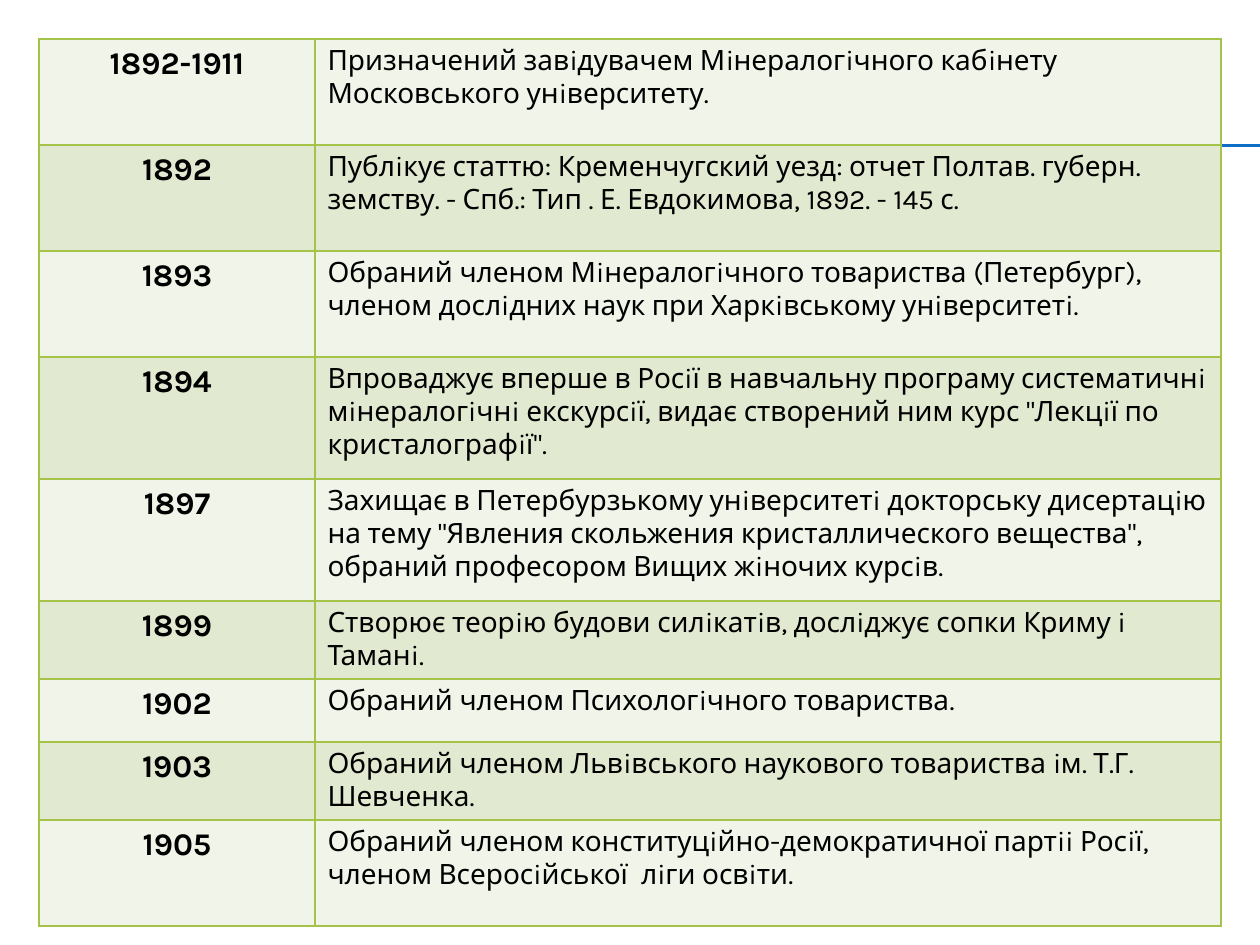
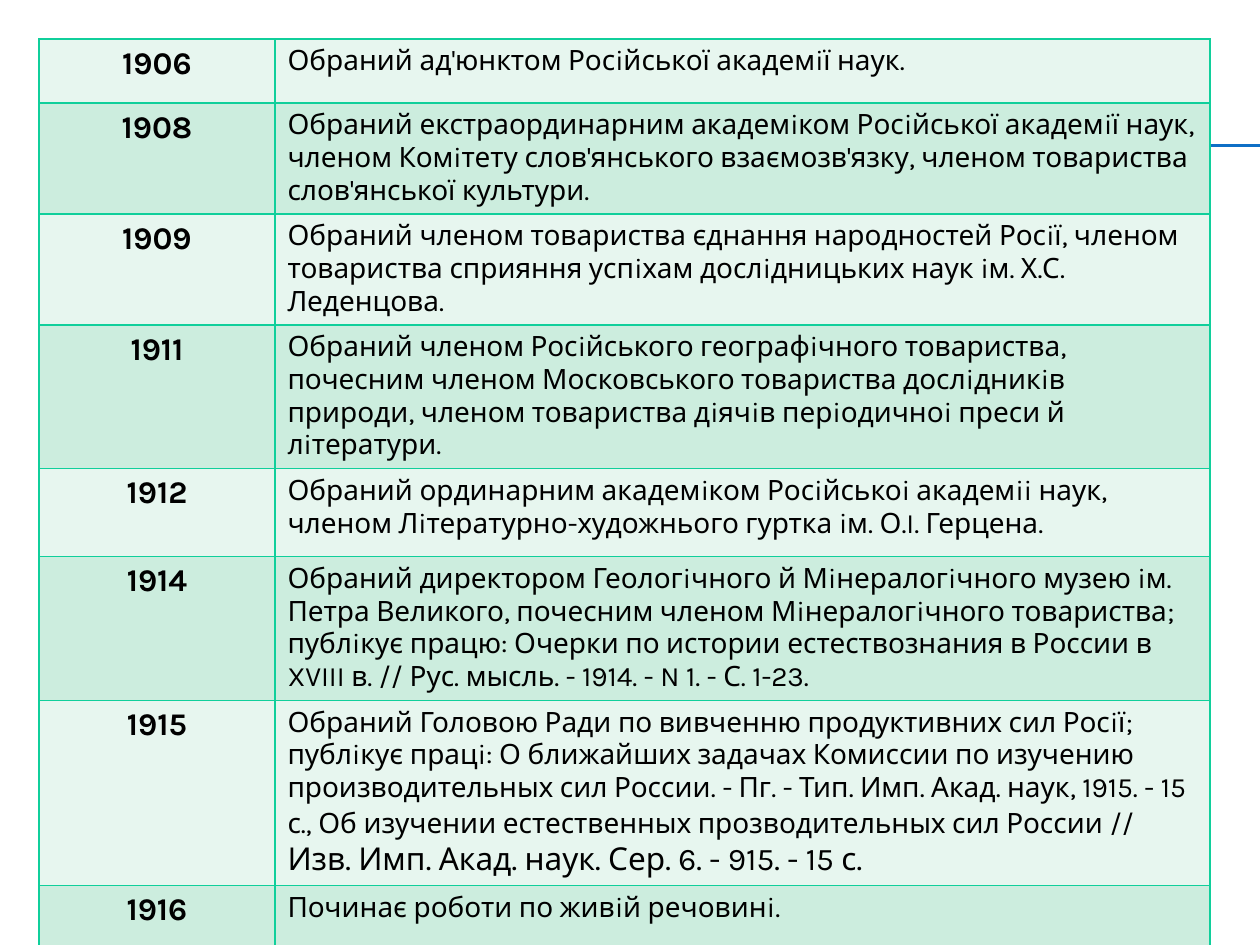
from dataclasses import dataclass

from lxml.etree import SubElement as Sub
from pptx import Presentation
from pptx.dml.color import RGBColor as Rgb
from pptx.enum.shapes import MSO_CONNECTOR as Link
from pptx.enum.text import PP_ALIGN as Align
from pptx.oxml.ns import qn
from pptx.util import Pt

# Each row: year, height in px, text (a tuple holds body text and larger text)
EARLY = [
    ("1892-1911", 106, "Призначений завiдувачем Мiнералогiчного кабiнету Московського унiверситету."),
    ("1892", 106, "Публiкує статтю: Кременчугский уезд: отчет Полтав. губерн. земству. "
     "- Спб.: Тип . Е. Евдокимова, 1892. - 145 с."),
    ("1893", 106, "Обраний членом Мiнералогiчного товариства (Петербург), "
     "членом дослiдних наук при Харкiвському унiверситетi."),
    ("1894", 122, "Впроваджує вперше в Росiї в навчальну програму систематичнi "
     "мiнералогiчнi екскурсiї, видає створений ним курс \"Лекцiї по кристалографiї\"."),
    ("1897", 122, "Захищає в Петербурзькому унiверситетi докторську дисертацiю на тему "
     "\"Явления скольжения кристаллического вещества\", обраний професором Вищих жiночих курсiв."),
    ("1899", 63, "Створює теорiю будови силiкатiв, дослiджує сопки Криму i Таманi."),
    ("1902", 63, "Обраний членом Психологiчного товариства."),
    ("1903", 63, "Обраний членом Львiвського наукового товариства iм. Т.Г. Шевченка."),
    ("1905", 106, "Обраний членом конституцiйно-демократичної партii Росiї, "
     "членом Всеросiйської  лiги освiти."),
]
LATER = [
    ("1906", 64, "Обраний ад'юнктом Росiйської академiї наук."),
    ("1908", 111, "Обраний екстраординарним академiком Росiйської академiї наук, "
     "членом Комiтету слов'янського взаємозв'язку, членом товариства слов'янської культури."),
    ("1909", 88, "Обраний членом товариства єднання народностей Росiї, "
     "членом товариства сприяння успiхам дослiдницьких наук iм. Х.С. Леденцова."),
    ("1911", 111, "Обраний членом Росiйського географiчного товариства, "
     "почесним членом Московського товариства дослiдникiв природи, "
     "членом товариства дiячiв перiодичноi преси й лiтератури."),
    ("1912", 88, "Обраний ординарним академiком Росiйськоi академii наук, "
     "членом Лiтературно-художнього гуртка iм. О.I. Герцена."),
    ("1914", 144, "Обраний директором Геологiчного й Мiнералогiчного музею iм. Петра Великого, "
     "почесним членом Мiнералогiчного товариства; публiкує працю: Очерки по истории "
     "естествознания в России в XVIII в. // Рус. мысль. - 1914. - N 1. - С. 1-23."),
    ("1915", 185, ("Обраний Головою Ради по вивченню продуктивних сил Росiї; публiкує працi: "
     "О ближайших задачах Комиссии по изучению производительных сил России. - Пг. - Тип. "
     "Имп. Акад. наук, 1915. - 15 с., Об изучении естественных прозводительных сил России //",
     " Изв. Имп. Акад. наук. Сер. 6. - 915. - 15 с.")),
    ("1916", 62, "Починає роботи по живiй речовинi."),
]
# Rows, column widths, border colour, alternating band fills
PAGES = [
    (EARLY, (276, 906), "A5C249", ("F0F4E9", "E1E9D0")),
    (LATER, (236, 935), "10CF9B", ("E7F6EF", "CCEDDE")),
]


@dataclass(frozen=True)
class Theme:
    font: str = "Karla"
    ink: str = "000000"
    rule: str = "0F6FC6"
    thin: float = 0.75
    edge: float = 1
    body: int = 16
    large: int = 18


LOOK = Theme()
WIDE, HIGH = 1260, 945
LEFT = TOP = 39
RULE_X, RULE_YS = 71, (145, 146)


def px(n):
    return round(n * 914400 / 126)


def rules(slide):
    for y in RULE_YS:
        line = slide.shapes.add_connector(Link.STRAIGHT, px(RULE_X), px(y), px(WIDE), px(y))
        line.line.color.rgb = Rgb.from_string(LOOK.rule)
        line.line.width = Pt(LOOK.thin)
        Sub(line._element.spPr, qn("a:effectLst"))


def border(cell, color):
    props = cell._tc.get_or_add_tcPr()
    for side in "LRTB":
        line = Sub(props, qn(f"a:ln{side}"), w=str(Pt(LOOK.edge)))
        Sub(Sub(line, qn("a:solidFill")), qn("a:srgbClr"), val=color)


def write(cell, runs, bold=False, align=Align.LEFT):
    """Add (text, size) runs to the first paragraph of a cell."""
    para = cell.text_frame.paragraphs[0]
    para.alignment = align
    for text, size in runs:
        run = para.add_run()
        run.text = text
        font = run.font
        font.name, font.size, font.bold = LOOK.font, Pt(size), bold
        font.color.rgb = Rgb.from_string(LOOK.ink)


def grid(slide, rows, cols, edge, bands):
    high = sum(row[1] for row in rows)
    table = slide.shapes.add_table(
        len(rows), len(cols), px(LEFT), px(TOP), px(sum(cols)), px(high)).table
    for col, wide in zip(table.columns, cols):
        col.width = px(wide)
    for i, (year, tall, text) in enumerate(rows):
        table.rows[i].height = px(tall)
        date, note = table.rows[i].cells
        for cell in (date, note):
            border(cell, edge)
            cell.fill.solid()
            cell.fill.fore_color.rgb = Rgb.from_string(bands[i % 2])
        parts = text if isinstance(text, tuple) else (text,)
        write(date, [(year, LOOK.large)], True, Align.CENTER)
        write(note, zip(parts, (LOOK.body, LOOK.large)))


def main():
    deck = Presentation()
    deck.slide_width, deck.slide_height = px(WIDE), px(HIGH)
    for page in PAGES:
        slide = deck.slides.add_slide(deck.slide_layouts[6])
        rules(slide)
        grid(slide, *page)
    deck.save("out.pptx")


if __name__ == "__main__":
    main()
